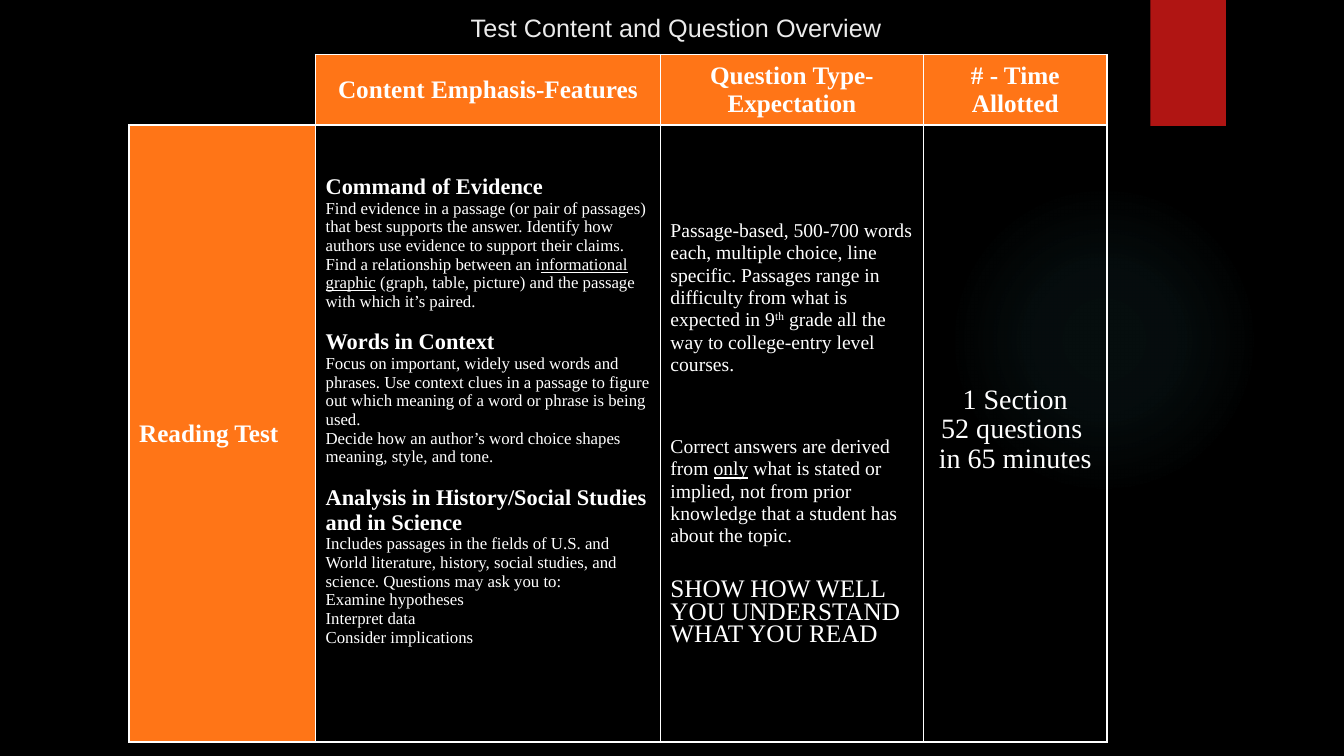
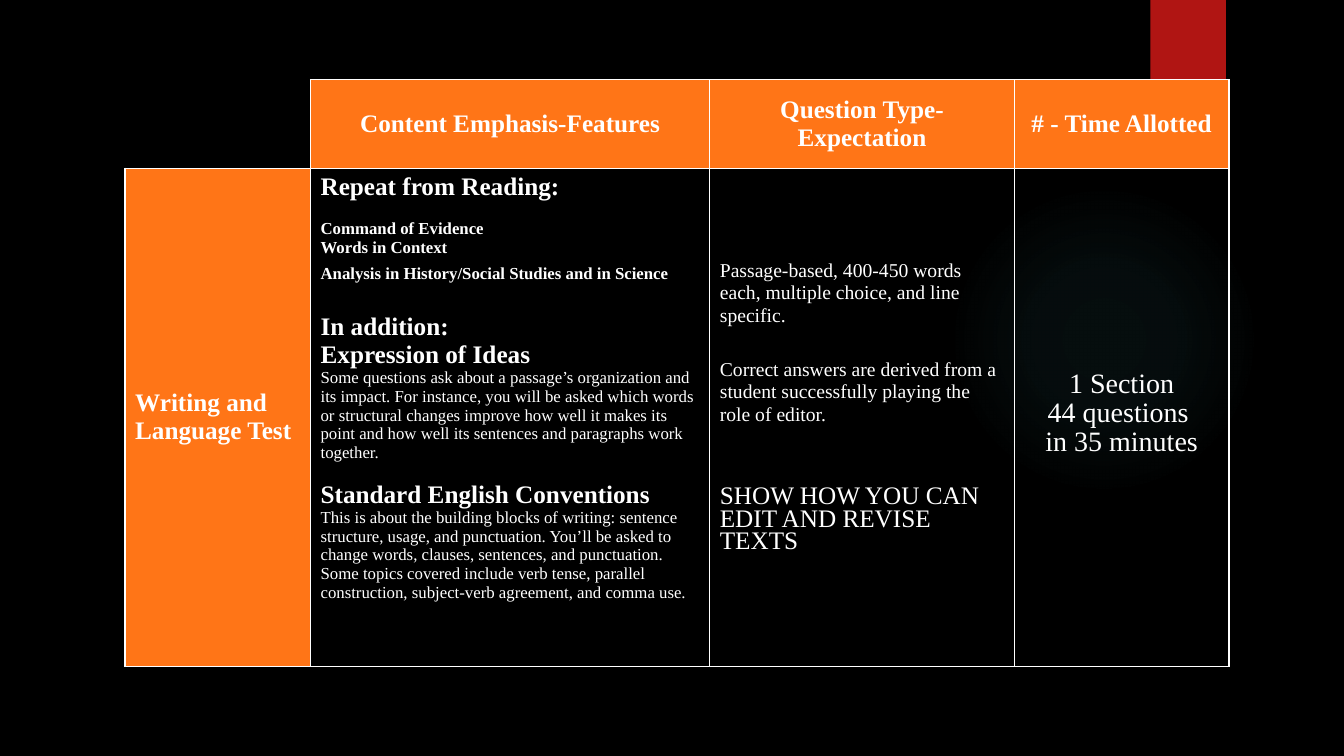
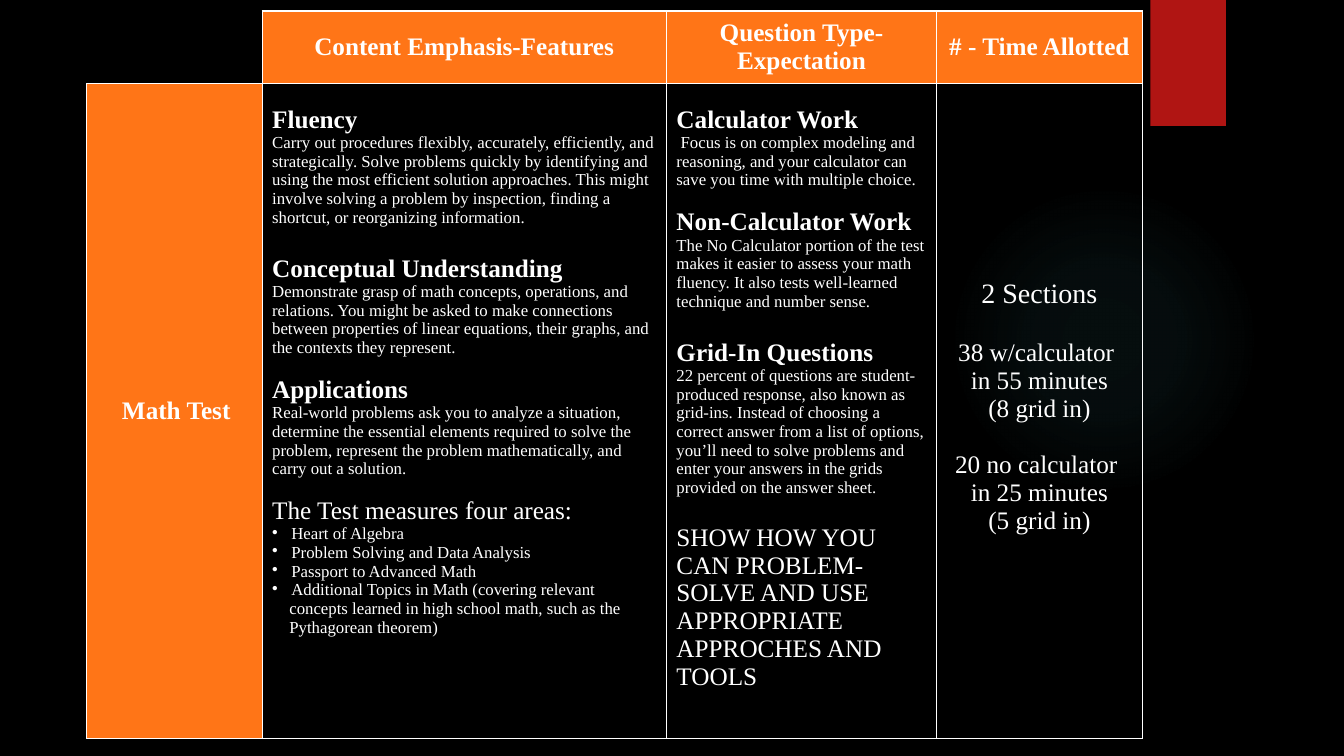
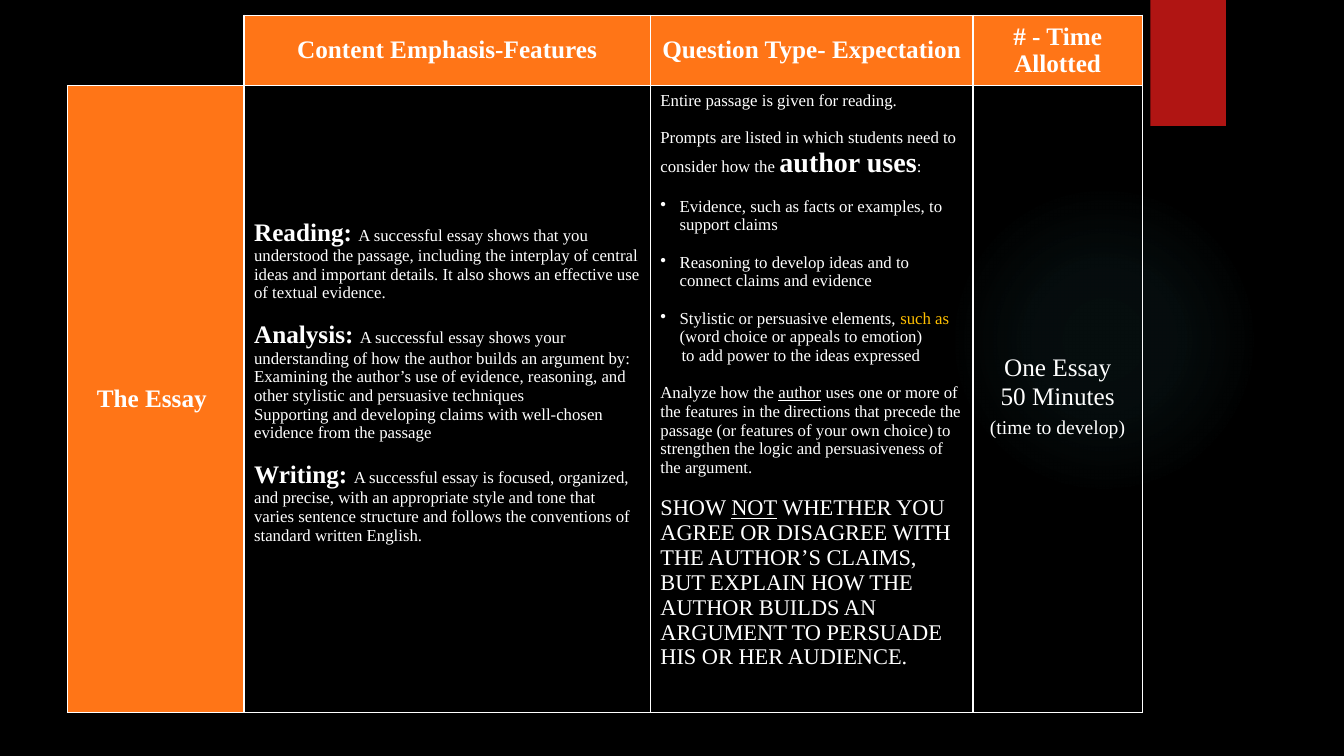
from dataclasses import dataclass

from lxml import etree
from pptx import Presentation
from pptx import util as u
from pptx.dml.color import RGBColor
from pptx.enum import shapes, text
from pptx.oxml import parse_xml
from pptx.oxml.ns import nsdecls, qn

BLACK = RGBColor(0x00, 0x00, 0x00)
WHITE = RGBColor(0xFF, 0xFF, 0xFF)
TITLE_GREY = RGBColor(0xEB, 0xEB, 0xEB)
ORANGE = RGBColor(0xFF, 0x75, 0x17)
RED = RGBColor(0xB0, 0x15, 0x13)
GOLD = RGBColor(0xFF, 0xC0, 0x00)
TEAL = RGBColor(0x50, 0xB9, 0xC1)

TITLE_FONT = "Arial"
TABLE_FONT = "Times New Roman"
HEADERS = ("Content Emphasis-Features", "Question Type- Expectation",
           "# - Time Allotted")
LINE_PITCH = 16      # exact line height, points
GAP = 13.3           # one line of 12 point text
WIDE_GAP = 19.9      # one line of 18 point text
BULLET_INDENT = 0.19


@dataclass
class Run:
    """Text whose unset properties come from its line."""
    text: str
    size: float = None
    bold: bool = None
    underline: bool = False
    color: RGBColor = WHITE
    superscript: bool = False


@dataclass
class Line:
    """One paragraph: sizes and spacing in points, indent in inches."""
    runs: tuple
    size: float = 12
    bold: bool = False
    before: float = 0
    pitch: float = None
    centered: bool = False
    bullet: bool = False
    indent: float = 0


@dataclass
class Cell:
    """Lines of a cell; without a top margin they are centred vertically."""
    lines: list
    top: float = None


def body(*runs, **options):
    return Line(runs, **options)


def heading(words, before=0, size=18):
    return Line((words,), size=size, bold=True, before=before)


def bullet(*runs, before=0):
    return Line(runs, before=before, bullet=True, indent=BULLET_INDENT)


def exact(*runs, size=14, before=0, centered=False):
    return Line(runs, size=size, before=before, pitch=LINE_PITCH,
                centered=centered)


def timing(section, *details):
    """Centred cell for the number of questions and the time."""
    return Cell([exact(section, size=20, centered=True), *details])


def label(words, indent=0):
    return Cell([Line((words,), size=18, bold=True, indent=indent)])


def header(words):
    return Cell([Line((words,), size=18, bold=True, centered=True)])


def write_run(paragraph, run, line):
    written = paragraph.add_run()
    written.text = run.text
    font = written.font
    font.name = TABLE_FONT
    font.size = u.Pt(run.size or line.size)
    font.bold = line.bold if run.bold is None else run.bold
    font.underline = run.underline
    font.color.rgb = run.color
    if run.superscript:
        font._element.set("baseline", "30000")


def write_line(paragraph, line):
    properties = paragraph._p.get_or_add_pPr()
    if line.indent:
        properties.set("marL", str(u.Inches(line.indent)))
    if line.bullet:
        properties.set("indent", str(-u.Inches(line.indent)))
        etree.SubElement(properties, qn("a:buChar")).set("char", "•")
    paragraph.alignment = (text.PP_ALIGN.CENTER if line.centered
                           else text.PP_ALIGN.LEFT)
    paragraph.space_before = u.Pt(line.before)
    if line.pitch:
        paragraph.line_spacing = u.Pt(line.pitch)
    for run in line.runs:
        write_run(paragraph, Run(run) if isinstance(run, str) else run, line)


def set_borders(cell, visible):
    """Draw the named sides in white and hide the others."""
    properties = cell._tc.get_or_add_tcPr()
    for side in "LRTB":
        fill = (f'<a:solidFill><a:srgbClr val="{WHITE}"/></a:solidFill>'
                if side in visible else "<a:noFill/>")
        properties.append(parse_xml(
            f'<a:ln{side} {nsdecls("a")} w="{u.Pt(1)}">{fill}</a:ln{side}>'))


def fill_cell(cell, content, color=None):
    set_borders(cell, "LRTB")
    if color is None:
        cell.fill.background()
    else:
        cell.fill.solid()
        cell.fill.fore_color.rgb = color
    if content.top is None:
        cell.vertical_anchor = text.MSO_ANCHOR.MIDDLE
    else:
        cell.vertical_anchor = text.MSO_ANCHOR.TOP
        cell.margin_top = u.Inches(content.top)
    frame = cell.text_frame
    for index, line in enumerate(content.lines):
        write_line(frame.add_paragraph() if index else frame.paragraphs[0],
                   line)


def add_test_table(slide, left, top, widths, heights, cells):
    """Table with one header row and one test row, label first."""
    frame = slide.shapes.add_table(
        2, 4, u.Inches(left), u.Inches(top),
        u.Inches(sum(widths)), u.Inches(sum(heights)))
    table = frame.table
    table.first_row = table.horz_banding = False
    for column, width in zip(table.columns, widths):
        column.width = u.Inches(width)
    for row, height in zip(table.rows, heights):
        row.height = u.Inches(height)

    corner = table.cell(0, 0)
    set_borders(corner, "RB")
    corner.fill.background()
    for column, words in enumerate(HEADERS, start=1):
        fill_cell(table.cell(0, column), header(words), ORANGE)
    for column, content in enumerate(cells):
        fill_cell(table.cell(1, column), content, None if column else ORANGE)


def add_plain_shape(slide, kind, left, top, width, height, color):
    shape = slide.shapes.add_shape(kind, u.Inches(left), u.Inches(top),
                                   u.Inches(width), u.Inches(height))
    shape.shadow.inherit = False
    shape.line.fill.background()
    shape.fill.solid()
    shape.fill.fore_color.rgb = color
    return shape


def add_glow(slide):
    """Faint circle that fades out from its centre."""
    glow = add_plain_shape(slide, shapes.MSO_SHAPE.OVAL,
                           9.41, 1.83, 3.08, 3.08, TEAL)
    stops = "".join(
        f'<a:gs pos="{place * 1000}"><a:srgbClr val="{TEAL}">'
        f'<a:alpha val="{opacity * 1000}"/></a:srgbClr></a:gs>'
        for place, opacity in ((0, 7), (36, 6), (69, 0), (100, 0)))
    gradient = parse_xml(
        f'<a:gradFill {nsdecls("a")}><a:gsLst>{stops}</a:gsLst>'
        '<a:path path="circle"><a:fillToRect l="50000" t="50000" '
        'r="50000" b="50000"/></a:path></a:gradFill>')
    properties = glow._element.spPr
    properties.replace(properties.find(qn("a:solidFill")), gradient)


def add_slide(presentation):
    slide = presentation.slides.add_slide(presentation.slide_layouts[6])
    add_glow(slide)
    add_plain_shape(slide, shapes.MSO_SHAPE.RECTANGLE,
                    11.41, 0, 0.75, 1.25, RED)
    return slide


def add_title(slide, words):
    box = slide.shapes.add_textbox(u.Inches(4.57), u.Inches(0.07),
                                   u.Inches(7.22), u.Inches(0.91))
    box.text_frame.word_wrap = True
    run = box.text_frame.paragraphs[0].add_run()
    run.text = words
    run.font.name = TITLE_FONT
    run.font.size = u.Pt(18)
    run.font.color.rgb = TITLE_GREY


def build_reading(presentation):
    slide = add_slide(presentation)
    add_title(slide, "Test Content and Question Overview")
    features = Cell([
        heading("Command of Evidence", size=16),
        body("Find evidence in a passage (or pair of passages) that best "
             "supports the answer. Identify how authors use evidence to "
             "support their claims. Find a relationship between an i",
             Run("nformational graphic", underline=True),
             " (graph, table, picture) and the passage with which it’s "
             "paired."),
        heading("Words in Context", GAP, size=16),
        body("Focus on important, widely used words and phrases. Use context "
             "clues in a passage to figure out which meaning of a word or "
             "phrase is being used."),
        body("Decide how an author’s word choice shapes meaning, style, and "
             "tone."),
        heading("Analysis in History/Social Studies and in Science", GAP,
                size=16),
        body("Includes passages in the fields of U.S. and World literature, "
             "history, social studies, and science. Questions may ask you "
             "to:"),
        body("Examine hypotheses"),
        body("Interpret data"),
        body("Consider implications"),
    ], top=0.49)
    expectation = Cell([
        exact("Passage-based, 500-700 words each, multiple choice, line "
              "specific. Passages range in difficulty from what is expected "
              "in 9", Run("th", superscript=True),
              " grade all the way to college-entry level courses."),
        exact("Correct answers are derived from ",
              Run("only", underline=True),
              " what is stated or implied, not from prior knowledge that a "
              "student has about the topic.", before=42.5),
        exact("SHOW HOW WELL YOU UNDERSTAND WHAT YOU READ", size=18,
              before=24),
    ])
    time = timing(
        "1 Section",
        exact("52 questions ", size=20, before=5, centered=True),
        exact("in 65 minutes", size=20, before=5, centered=True))
    add_test_table(slide, 1.28, 0.54, (1.85, 3.42, 2.61, 1.82), (0.65, 6.12),
                   (label("Reading Test"), features, expectation, time))


def build_writing(presentation):
    slide = add_slide(presentation)
    features = Cell([
        heading("Repeat from Reading:"),
        heading("Command of Evidence", GAP, size=12),
        heading("Words in Context", size=12),
        heading("Analysis in History/Social Studies and in Science", 5.3,
                size=12),
        heading("In addition:", 21.2),
        heading("Expression of Ideas"),
        body("Some questions ask about a passage’s organization and its "
             "impact. For instance, you will be asked which words or "
             "structural changes improve how well it makes its point and how "
             "well its sentences and paragraphs work together."),
        heading("Standard English Conventions", GAP),
        body("This is about the building blocks of writing: sentence "
             "structure, usage, and punctuation. You’ll be asked to change "
             "words, clauses, sentences, and punctuation. Some topics covered "
             "include verb tense, parallel construction, subject-verb "
             "agreement, and comma use."),
    ], top=0.05)
    expectation = Cell([
        exact("Passage-based, 400-450 words each, multiple choice, and line "
              "specific."),
        exact("Correct answers are derived from a student successfully "
              "playing the role of editor.", before=23),
        exact("SHOW HOW YOU CAN EDIT AND REVISE TEXTS", size=18, before=44.5),
    ], top=0.9)
    time = timing(
        "1 Section",
        exact("44 questions ", size=20, before=5, centered=True),
        exact("in 35 minutes", size=20, before=5, centered=True))
    add_test_table(slide, 1.24, 0.79, (1.84, 3.96, 3.02, 2.13), (0.88, 4.94),
                   (label("Writing and Language Test"), features, expectation,
                    time))


def build_math(presentation):
    slide = add_slide(presentation)
    features = Cell([
        heading("Fluency"),
        body("Carry out procedures flexibly, accurately, efficiently, and "
             "strategically. Solve problems quickly by identifying and using "
             "the most efficient solution approaches. This might involve "
             "solving a problem by inspection, finding a shortcut, or "
             "reorganizing information."),
        heading("Conceptual Understanding", WIDE_GAP),
        body("Demonstrate grasp of math concepts, operations, and relations. "
             "You might be asked to make connections between properties of "
             "linear equations, their graphs, and the contexts they "
             "represent."),
        heading("Applications", GAP),
        body("Real-world problems ask you to analyze a situation, determine "
             "the essential elements required to solve the problem, represent "
             "the problem mathematically, and carry out a solution."),
        body("The Test measures four areas:", size=18, before=GAP),
        bullet("Heart of Algebra"),
        bullet("Problem Solving and Data Analysis"),
        bullet("Passport to Advanced Math"),
        bullet("Additional Topics in Math (covering relevant"),
        body("concepts learned in high school math, such as the",
             indent=0.17),
        body("Pythagorean theorem)", indent=0.17),
    ], top=0.22)
    expectation = Cell([
        heading("Calculator Work"),
        body(" Focus is on complex modeling and reasoning, and your "
             "calculator can save you time with multiple choice."),
        heading("Non-Calculator Work", GAP),
        body("The No Calculator portion of the test makes it easier to "
             "assess your math fluency. It also tests well-learned technique "
             "and number sense."),
        heading("Grid-In Questions", WIDE_GAP),
        body("22 percent of questions are student-produced response, also "
             "known as grid-ins. Instead of choosing a correct answer from a "
             "list of options, you’ll need to solve problems and enter your "
             "answers in the grids provided on the answer sheet."),
        body("SHOW HOW YOU CAN PROBLEM-", size=18, before=19),
        body("SOLVE AND USE APPROPRIATE APPROCHES AND TOOLS", size=18),
    ], top=0.22)
    details = (("38 w/calculator ", 21), ("in 55 minutes", 0),
               ("(8 grid in)", 0), ("20 no calculator ", WIDE_GAP),
               ("in 25 minutes", 0), ("(5 grid in)", 0))
    time = timing("2 Sections", *(
        body(words, size=18, before=before, centered=True)
        for words, before in details))
    add_test_table(slide, 0.86, 0.11, (1.74, 4.01, 2.68, 2.04), (0.72, 6.47),
                   (label("Math Test", indent=0.25), features, expectation,
                    time))


def build_essay(presentation):
    slide = add_slide(presentation)

    def trait(name, words, before=0):
        return body(Run(name, size=18, bold=True), words, before=before)

    features = Cell([
        trait("Reading: ",
              "A successful essay shows that you understood the passage, "
              "including the interplay of central ideas and important "
              "details. It also shows an effective use of textual evidence."),
        trait("Analysis: ",
              "A successful essay shows your understanding of how the author "
              "builds an argument by: Examining the author’s use of evidence, "
              "reasoning, and other stylistic and persuasive techniques",
              GAP),
        body("Supporting and developing claims with well-chosen evidence from "
             "the passage"),
        trait("Writing: ",
              "A successful essay is focused, organized, and precise, with an "
              "appropriate style and tone that varies sentence structure and "
              "follows the conventions of standard written English.", GAP),
    ], top=1.32)
    expectation = Cell([
        body("Entire passage is given for reading."),
        body("Prompts are listed in which students need to consider how the ",
             Run("author uses", size=20, bold=True), ":", before=GAP),
        bullet("Evidence, such as facts or examples, to support claims",
               before=GAP),
        bullet("Reasoning to develop ideas and to connect claims and evidence",
               before=GAP),
        bullet("Stylistic or persuasive elements, ",
               Run("such as ", color=GOLD),
               "(word choice or appeals to emotion)", before=GAP),
        body("to add power to the ideas expressed", indent=0.21),
        body("Analyze how the ", Run("author", underline=True),
             " uses one or more of the features in the directions that "
             "precede the passage (or features of your own choice) to "
             "strengthen the logic and persuasiveness of the argument.",
             before=GAP),
        body("SHOW ", Run("NOT", underline=True),
             " WHETHER YOU AGREE OR DISAGREE WITH THE AUTHOR’S CLAIMS, BUT "
             "EXPLAIN HOW THE AUTHOR BUILDS AN ARGUMENT TO PERSUADE HIS OR "
             "HER AUDIENCE.", size=16, before=GAP),
    ], top=0.06)
    time = Cell([
        exact("One Essay", size=18, centered=True),
        exact("50 Minutes", size=18, before=4.5, centered=True),
        exact("(time to develop)", before=3.5, centered=True),
    ])
    add_test_table(slide, 0.67, 0.15, (1.75, 4.03, 3.2, 1.68), (0.69, 6.08),
                   (label("The Essay", indent=0.19), features, expectation,
                    time))


def main():
    presentation = Presentation()
    presentation.slide_width = u.Inches(13.33)
    presentation.slide_height = u.Inches(7.5)
    background = presentation.slide_master.background.fill
    background.solid()
    background.fore_color.rgb = BLACK
    for build in (build_reading, build_writing, build_math, build_essay):
        build(presentation)
    presentation.save("out.pptx")


if __name__ == "__main__":
    main()
